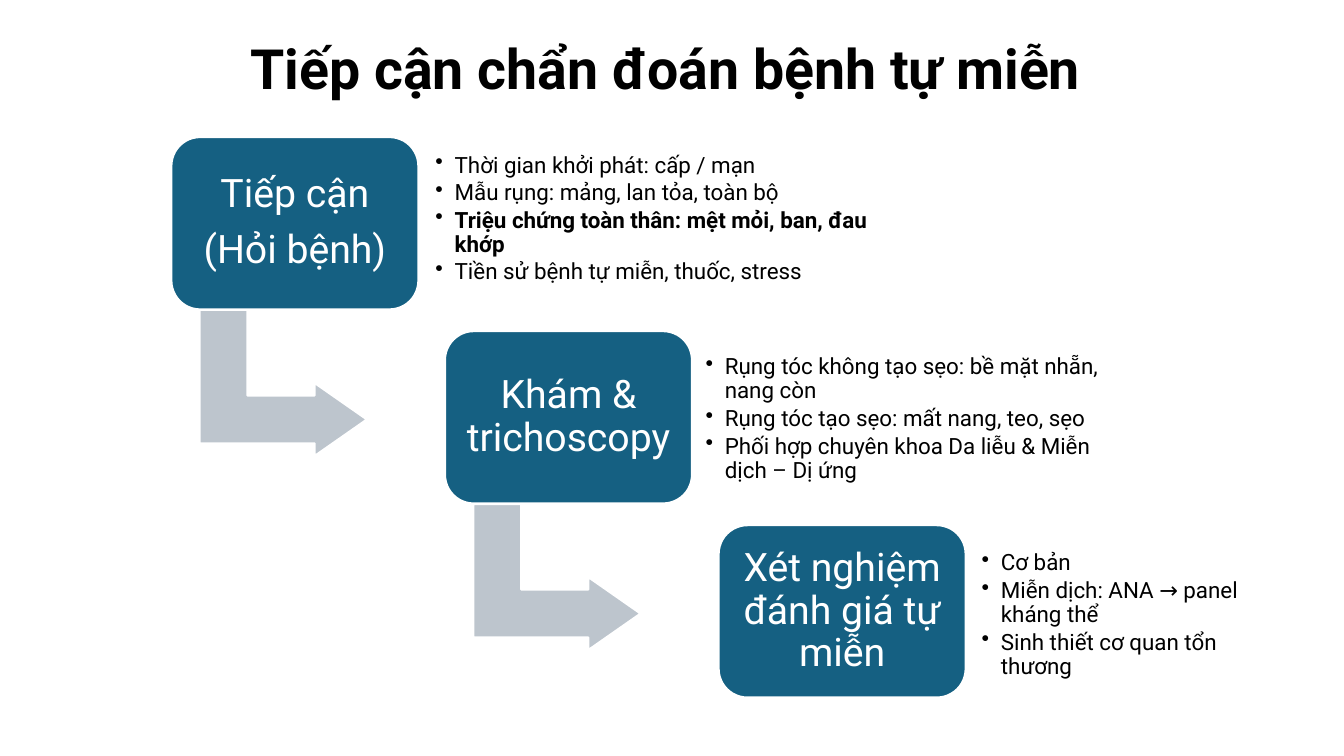
from lxml.etree import SubElement
from pptx import Presentation
from pptx.dml.color import RGBColor
from pptx.enum.shapes import MSO_SHAPE
from pptx.enum.text import MSO_ANCHOR, PP_ALIGN
from pptx.oxml.ns import qn
from pptx.util import Inches, Pt

COLORS = {"step": "156082", "arrow": "BDC5CD", "white": "FFFFFF", "text": "000000"}
FONT = "Roboto"
W, H = Inches(13.33), Inches(7.5)
COL, ROW = W / 100, H / 100
STEP_X, STEP_Y, STEP_W, STEP_H = 12.75, 18.13, 18.38, 22.8
STEP_DX, STEP_DY = 20.36, 25.67
NOTES_H = 18.53

STEPS = [
    {
        "title": ["Tiếp cận", "(Hỏi bệnh)"],
        "notes": [
            ("Thời gian khởi phát: cấp / mạn", False),
            ("Mẫu rụng: mảng, lan tỏa, toàn bộ", False),
            ("Triệu chứng toàn thân: mệt mỏi, ban, đau khớp", True),
            ("Tiền sử bệnh tự miễn, thuốc, stress", False),
        ],
        "notes_box": (19.13, 1.6, 34.81),
    },
    {
        "title": ["Khám & trichoscopy"],
        "notes": [
            ("Rụng tóc không tạo sẹo: bề mặt nhẵn, nang còn", False),
            ("Rụng tóc tạo sẹo: mất nang, teo, sẹo", False),
            ("Phối hợp chuyên khoa Da liễu & Miễn dịch – Dị ứng", False),
        ],
        "notes_box": (18.87, 2.4, 31.88),
    },
    {
        "title": ["Xét nghiệm đánh giá tự miễn"],
        "notes": [
            ("Cơ bản", False),
            ("Miễn dịch: ANA → panel kháng thể", False),
            ("Sinh thiết cơ quan tổn thương", False),
        ],
        "notes_box": (19.05, 2.67, 20.33),
    },
]


def grid(x, y, w, h):
    """Turn columns and rows into slide lengths."""
    return round(x * COL), round(y * ROW), round(w * COL), round(h * ROW)


def set_frame(tf, inset):
    """Wrap a text frame, centre it vertically and set its insets."""
    tf.word_wrap = True
    tf.vertical_anchor = MSO_ANCHOR.MIDDLE
    tf.margin_left = tf.margin_right = Inches(inset)
    tf.margin_top = tf.margin_bottom = Inches(inset)


def add_line(tf, i, text, size, color, bold=False, align=PP_ALIGN.CENTER, after=0, bullet=False):
    """Write paragraph i of a text frame as one run."""
    p = tf.paragraphs[0] if i == 0 else tf.add_paragraph()
    p.alignment, p.line_spacing, p.space_after = align, 0.9, Pt(after)
    if bullet:
        pPr = p._p.get_or_add_pPr()
        pPr.set("marL", str(Inches(0.19)))
        pPr.set("indent", str(-Inches(0.19)))
        SubElement(pPr, qn("a:buChar"), char="•")
    r = p.add_run()
    r.text = text
    r.font.name, r.font.size, r.font.bold = FONT, Pt(size), bold
    r.font.color.rgb = RGBColor.from_string(COLORS[color])


def add_block(s, kind, box, fill, adjustments):
    """Add a filled shape with a white outline."""
    sp = s.shapes.add_shape(kind, *grid(*box))
    sp.shadow.inherit = False
    sp.fill.solid()
    sp.fill.fore_color.rgb = RGBColor.from_string(COLORS[fill])
    sp.line.color.rgb = RGBColor.from_string(COLORS["white"])
    sp.line.width = Pt(1.5)
    for i, value in enumerate(adjustments):
        sp.adjustments[i] = value
    return sp


def add_title(s, box, text):
    """Add the slide title."""
    tf = s.shapes.add_textbox(*grid(*box)).text_frame
    set_frame(tf, 0.05)
    add_line(tf, 0, text, 39.6, "text", bold=True)


def add_notes(s, box, notes):
    """Add the bullet list beside a step."""
    tf = s.shapes.add_textbox(*grid(*box)).text_frame
    set_frame(tf, 0.07)
    for i, (text, bold) in enumerate(notes):
        add_line(tf, i, text, 16, "text", bold, PP_ALIGN.LEFT, 2.4, bullet=True)


def add_step(s, box, step, has_next):
    """Add a step, its bullets and the arrow to the next step."""
    x, y, w, h = box
    if has_next:
        arrow = add_block(s, MSO_SHAPE.BENT_UP_ARROW, (x + 2.89, y + 21.47, 10.87, 22.13),
                          "arrow", (0.328, 0.25, 0.358))
        arrow.rotation = 90
    sp = add_block(s, MSO_SHAPE.ROUNDED_RECTANGLE, box, "step", (0.167,))
    set_frame(sp.text_frame, 0.12)
    for i, text in enumerate(step["title"]):
        add_line(sp.text_frame, i, text, 28, "white", after=9.8)
    dx, dy, notes_w = step["notes_box"]
    add_notes(s, (x + dx, y + dy, notes_w, NOTES_H), step["notes"])


def main():
    """Build and save the slide."""
    prs = Presentation()
    prs.slide_width, prs.slide_height = W, H
    s = prs.slides.add_slide(prs.slide_layouts[6])
    add_title(s, (6.9, 5.33, 86.27, 8.27), "Tiếp cận chẩn đoán bệnh tự miễn ")
    for i, step in enumerate(STEPS):
        box = (STEP_X + i * STEP_DX, STEP_Y + i * STEP_DY, STEP_W, STEP_H)
        add_step(s, box, step, i < len(STEPS) - 1)
    prs.save("out.pptx")


if __name__ == "__main__":
    main()
